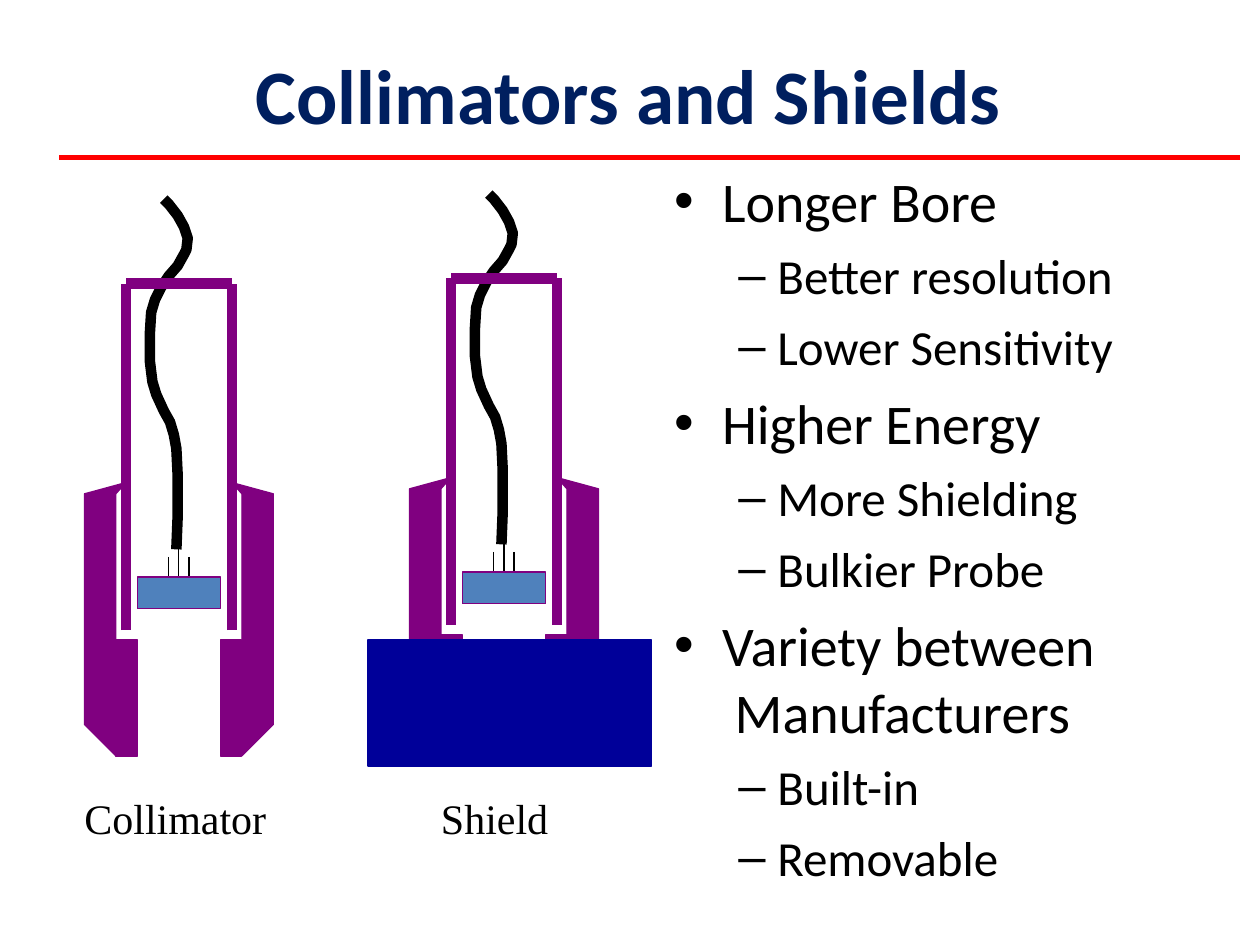
from pptx import Presentation
from pptx.dml.color import RGBColor
from pptx.enum.shapes import MSO_CONNECTOR, MSO_SHAPE
from pptx.enum.text import MSO_ANCHOR, MSO_AUTO_SIZE, PP_ALIGN
from pptx.oxml.ns import qn
from pptx.util import Inches, Pt
from lxml import etree

COLORS = {"navy": "001F5F", "black": "000000", "purple": "800080",
          "crystal": "4F81BC", "shield": "000099", "red": "FF0000"}
THIN, THICK = 0.72, 6

# Probe outlines: x is measured from the probe's axis, y from the slide top.
CABLE = [(-0.02, 4.36), (-0.01, 4.11), (-0.01, 3.76), (-0.02, 3.56),
         (-0.04, 3.45), (-0.07, 3.35), (-0.12, 3.26), (-0.18, 3.13),
         (-0.21, 3.03), (-0.23, 2.87), (-0.23, 2.64), (-0.22, 2.48),
         (-0.19, 2.38), (-0.14, 2.28), (-0.08, 2.19), (-0.01, 2.11),
         (0.04, 2.02), (0.06, 1.98), (0.07, 1.89), (0.04, 1.8),
         (-0.01, 1.71), (-0.08, 1.62), (-0.12, 1.58)]
JACKET = [(0.42, 3.83), (0.75, 3.92), (0.75, 5.75), (0.5, 6), (0.5, 3.92)]
LIP = [(0.33, 5.08), (0.5, 5.08), (0.5, 6), (0.33, 6)]
CRYSTAL = [(-0.33, 4.58), (0.33, 4.58), (0.33, 4.83), (-0.33, 4.83)]
PINS = [(-0.08, 4.42), (0, 4.33), (0.08, 4.42)]
WALLS = [((-0.42, 5), (-0.42, 2.25)), ((0.42, 5), (0.42, 2.25)),
         ((-0.42, 2.25), (0.42, 2.25))]


def draw_outline(shapes, points, line, width, fill=None):
    """Draw a closed filled outline, or an open path when there is no fill."""
    vertices = [(Inches(x), Inches(y)) for x, y in points]
    builder = shapes.build_freeform(*vertices[0])
    builder.add_line_segments(vertices[1:], close=fill is not None)
    shape = builder.convert_to_shape()
    shape.shadow.inherit = False
    if fill:
        shape.fill.solid()
        shape.fill.fore_color.rgb = RGBColor.from_string(COLORS[fill])
    else:
        shape.fill.background()
    shape.line.color.rgb = RGBColor.from_string(COLORS[line])
    shape.line.width = Pt(width)


def draw_line(shapes, start, end, color, width):
    connector = shapes.add_connector(
        MSO_CONNECTOR.STRAIGHT, *[Inches(value) for value in (*start, *end)])
    connector.line.color.rgb = RGBColor.from_string(COLORS[color])
    connector.line.width = Pt(width)
    etree.SubElement(connector._element.spPr, qn("a:effectLst"))


presentation = Presentation()
presentation.slide_width = Inches(10)
presentation.slide_height = Inches(7.5)
slide = presentation.slides.add_slide(presentation.slide_layouts[1])
title, body = slide.placeholders

# Probes
for axis, shift in [(1.42, 0), (4, -0.04)]:
    probe = slide.shapes.add_group_shape().shapes
    draw_outline(probe, [(axis + x, y + shift) for x, y in CABLE], "black", THICK)
    for x, top in PINS:
        draw_line(probe, (axis + x, top + shift), (axis + x, 4.58 + shift),
                  "black", THIN)
    for (x1, y1), (x2, y2) in WALLS:
        draw_line(probe, (axis + x1, y1 + shift), (axis + x2, y2 + shift),
                  "purple", THICK)
    draw_outline(probe, [(axis + x, y + shift) for x, y in CRYSTAL],
                 "purple", THIN, "crystal")
    for side in (1, -1):
        for part in (JACKET, LIP):
            draw_outline(probe, [(axis + side * x, y + shift) for x, y in part],
                         "purple", THIN, "purple")

shield = slide.shapes.add_shape(MSO_SHAPE.RECTANGLE, Inches(2.92), Inches(5.08),
                                Inches(2.25), Inches(1))
shield.shadow.inherit = False
shield.fill.solid()
shield.fill.fore_color.rgb = RGBColor.from_string(COLORS["shield"])
shield.line.color.rgb = RGBColor.from_string(COLORS["shield"])
shield.line.width = Pt(THIN)

draw_line(slide.shapes, (0.47, 1.25), (9.84, 1.25), "red", 2.52)

# Title and captions
title.left, title.top = Inches(2.03), Inches(0.37)
title.width, title.height = Inches(7.97), Inches(0.76)
collimator_caption = slide.shapes.add_textbox(
    Inches(0.67), Inches(6.28), Inches(1.5), Inches(0.43))
shield_caption = slide.shapes.add_textbox(
    Inches(3.5), Inches(6.28), Inches(0.9), Inches(0.43))
for shape, text, font_name, size, color, bold in [
        (title, "Collimators and Shields", "Calibri", 44, "navy", True),
        (collimator_caption, "Collimator", "Times New Roman", 24, "black", False),
        (shield_caption, "Shield", "Times New Roman", 24, "black", False)]:
    frame = shape.text_frame
    frame.text = text
    frame.word_wrap = True
    frame.auto_size = MSO_AUTO_SIZE.NONE
    frame.vertical_anchor = MSO_ANCHOR.TOP
    frame.margin_left = frame.margin_right = frame.margin_bottom = 0
    frame.margin_top = Inches(0.01)
    paragraph = frame.paragraphs[0]
    paragraph.alignment = PP_ALIGN.LEFT
    paragraph.space_before = Pt(1)
    font = paragraph.runs[0].font
    font.name, font.size, font.bold = font_name, Pt(size), bold
    font.color.rgb = RGBColor.from_string(COLORS[color])

# Bullet list
LEVELS = [{"size": 32, "before": 7.5, "margin": 0.39, "indent": -0.38},
          {"size": 28, "before": 6.8, "margin": 0.83, "indent": -0.31}]
ITEMS = [("Longer Bore", 0), ("Better resolution", 1), ("Lower Sensitivity", 1),
         ("Higher Energy", 0), ("More Shielding", 1), ("Bulkier Probe", 1),
         ("Variety between\v Manufacturers", 0), ("Built-in", 1), ("Removable", 1)]
body.left, body.top = Inches(5.34), Inches(1.2)
body.width, body.height = Inches(3.51), Inches(5.85)
frame = body.text_frame
frame.word_wrap = True
frame.auto_size = MSO_AUTO_SIZE.NONE
frame.margin_left = frame.margin_right = frame.margin_bottom = 0
frame.margin_top = Inches(0.12)
for index, (text, level) in enumerate(ITEMS):
    style = LEVELS[level]
    paragraph = frame.add_paragraph() if index else frame.paragraphs[0]
    paragraph.text = text
    paragraph.level = level
    paragraph.space_before = Pt(style["before"] if index else 9)
    properties = paragraph._p.get_or_add_pPr()
    properties.set("marL", str(Inches(style["margin"])))
    properties.set("indent", str(Inches(style["indent"])))
    for run in paragraph.runs:
        run.font.name = "Calibri"
        run.font.size = Pt(style["size"])
        run.font.color.rgb = RGBColor.from_string(COLORS["black"])

presentation.save("out.pptx")
